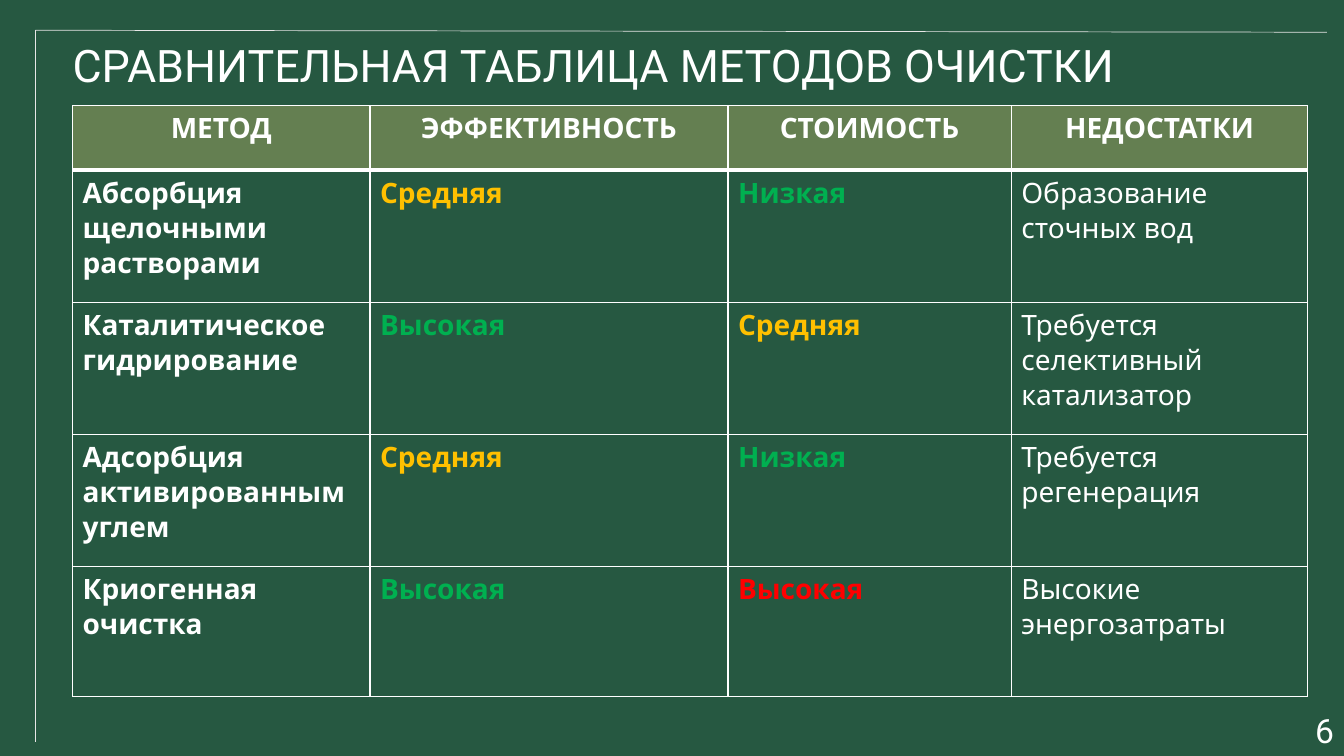
import pptx
import pptx.util
import pptx.dml.color
import pptx.enum.shapes
import pptx.enum.text
import pptx.oxml
import pptx.oxml.ns

Inches = pptx.util.Inches
Pt = pptx.util.Pt
ALIGN = pptx.enum.text.PP_ALIGN
ANCHOR = pptx.enum.text.MSO_ANCHOR
NS = pptx.oxml.ns.nsdecls("a")

COLORS = {
    "back": "265841",
    "head": "647F51",
    "white": "FFFFFF",
    "rule": "E7E6E6",
    "good": "00B050",
    "mid": "FFC000",
    "bad": "FF0000",
}
HEADS = ["МЕТОД", "ЭФФЕКТИВНОСТЬ", "СТОИМОСТЬ", "НЕДОСТАТКИ"]
ROWS = [
    ["Абсорбция щелочными растворами", "Средняя", "Низкая", "Образование сточных вод"],
    ["Каталитическое гидрирование", "Высокая", "Средняя", "Требуется селективный катализатор"],
    ["Адсорбция активированным углем", "Средняя", "Низкая", "Требуется регенерация"],
    ["Криогенная очистка", "Высокая", "Высокая", "Высокие энергозатраты"],
]
RATES = [
    {},
    {"Высокая": "good", "Средняя": "mid", "Низкая": "bad"},
    {"Высокая": "bad", "Средняя": "mid", "Низкая": "good"},
    {},
]
WIDTHS = [2.95, 3.55, 2.81, 2.94]
HEIGHTS = [0.64, 1.31, 1.31, 1.31, 1.29]


def rgb(name):
    return pptx.dml.color.RGBColor.from_string(COLORS[name])


def write(frame, text, size, face, color="white", bold=False, align=ALIGN.LEFT):
    frame.text = text
    frame.word_wrap = True
    para = frame.paragraphs[0]
    para.alignment = align
    font = para.runs[0].font
    font.size = Pt(size)
    font.name = face
    font.bold = bold
    font.color.rgb = rgb(color)
    return font


def place(shape, left, top, width, height):
    shape.left, shape.top = Inches(left), Inches(top)
    shape.width, shape.height = Inches(width), Inches(height)


def add_title(slide, text):
    title = slide.shapes.title
    place(title, 0.62, 0.32, 11.08, 0.64)
    frame = title.text_frame
    frame.vertical_anchor = ANCHOR.TOP
    frame.auto_size = pptx.enum.text.MSO_AUTO_SIZE.NONE
    write(frame, text, 32, "Roboto")
    shade = pptx.oxml.parse_xml(
        f'<a:effectLst {NS}><a:outerShdw blurRad="38100" dist="38100" dir="2700000" algn="tl">'
        '<a:srgbClr val="000000"><a:alpha val="60000"/></a:srgbClr></a:outerShdw></a:effectLst>')
    props = frame.paragraphs[0].runs[0]._r.get_or_add_rPr()
    props.find(pptx.oxml.ns.qn("a:solidFill")).addnext(shade)


def add_rule(slide, right, bottom):
    line = slide.shapes.add_connector(
        pptx.enum.shapes.MSO_CONNECTOR.STRAIGHT,
        Inches(0.35), Inches(0.3), Inches(right), Inches(bottom))
    line.line.color.rgb = rgb("rule")
    line.line.width = Pt(0.5)
    line._element.spPr.append(pptx.oxml.parse_xml(f"<a:effectLst {NS}/>"))


def add_edges(cell, top, bottom):
    props = cell._tc.get_or_add_tcPr()
    sides = {"L": 1, "R": 1, "T": top, "B": bottom}
    for spot, (side, width) in enumerate(sides.items()):
        props.insert(spot, pptx.oxml.parse_xml(
            f'<a:ln{side} {NS} w="{Pt(width)}"><a:solidFill>'
            f'<a:srgbClr val="{COLORS["white"]}"/></a:solidFill></a:ln{side}>'))


def add_grid(slide):
    shape = slide.shapes.add_table(
        len(HEIGHTS), len(WIDTHS), Inches(0.72), Inches(1.05),
        Inches(sum(WIDTHS)), Inches(sum(HEIGHTS)))
    table = shape.table
    table.horz_banding = False
    for col, width in zip(table.columns, WIDTHS):
        col.width = Inches(width)
    for row, height in zip(table.rows, HEIGHTS):
        row.height = Inches(height)
    for y, texts in enumerate([HEADS] + ROWS):
        head = y == 0
        for x, text in enumerate(texts):
            cell = table.cell(y, x)
            cell.fill.solid()
            cell.fill.fore_color.rgb = rgb("head" if head else "back")
            write(cell.text_frame, text, 20, "Quicksand",
                  RATES[x].get(text, "white"), head or x < 3,
                  ALIGN.CENTER if head else ALIGN.LEFT)
            add_edges(cell, 3 if y == 1 else 1, 3 if head else 1)


def add_page(slide, text):
    box = slide.shapes.add_textbox(0, 0, 0, 0)
    place(box, 10.33, 7.04, 3, 0.4)
    box.text_frame.vertical_anchor = ANCHOR.MIDDLE
    write(box.text_frame, text, 24, "Roboto", align=ALIGN.RIGHT)


def main():
    deck = pptx.Presentation()
    deck.slide_width, deck.slide_height = Inches(13.33), Inches(7.5)
    slide = deck.slides.add_slide(deck.slide_layouts[5])
    slide.background.fill.solid()
    slide.background.fill.fore_color.rgb = rgb("back")
    add_page(slide, "6")
    add_rule(slide, 13.16, 0.32)
    add_rule(slide, 0.35, 7.36)
    add_grid(slide)
    add_title(slide, "СРАВНИТЕЛЬНАЯ ТАБЛИЦА МЕТОДОВ ОЧИСТКИ")
    deck.save("out.pptx")


if __name__ == "__main__":
    main()
